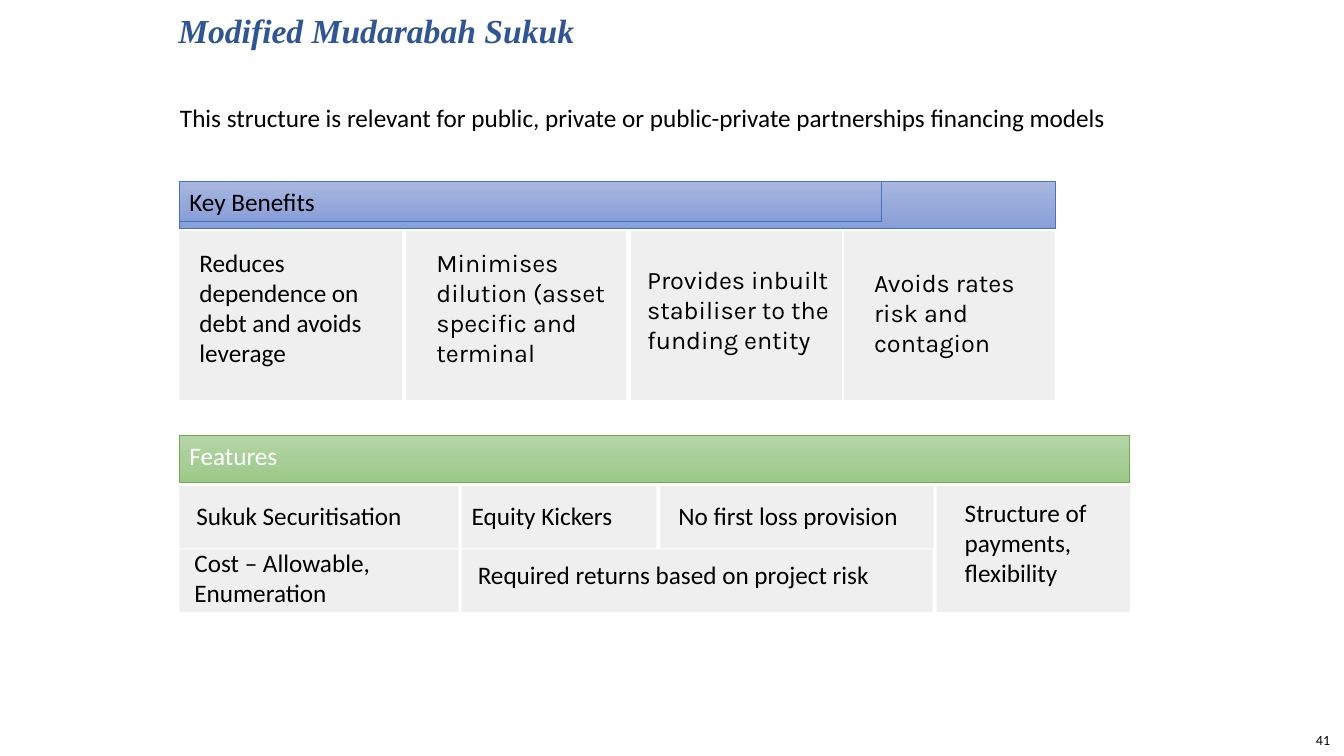
from lxml import etree
from pptx import Presentation
from pptx.dml.color import RGBColor
from pptx.enum import shapes, text
from pptx.oxml import ns
from pptx.util import Inches, Pt

COLORS = {
    "black": "000000", "white": "FFFFFF", "title": "2F5597", "panel": "D9D9D9",
    "blue_top": "A8B7DF", "blue_bottom": "889ED7", "blue_line": "4472C4",
    "green_top": "B5D5A7", "green_bottom": "9CC987", "green_line": "70AD47",
}

presentation = Presentation()
presentation.slide_width = Inches(13.33)
presentation.slide_height = Inches(7.5)
slide = presentation.slides.add_slide(presentation.slide_layouts[6])


def write(shape, words, size=18, font="Calibri", color="black"):
    frame = shape.text_frame
    frame.word_wrap = True
    frame.vertical_anchor = text.MSO_ANCHOR.TOP
    paragraph = frame.paragraphs[0]
    paragraph.text = words
    paragraph.alignment = text.PP_ALIGN.LEFT
    paragraph.font.size = Pt(size)
    paragraph.font.name = font
    paragraph.font.color.rgb = RGBColor.from_string(COLORS[color])
    return paragraph


def add_box(left, top, width, height, kind=shapes.MSO_SHAPE.RECTANGLE):
    shape = slide.shapes.add_shape(
        kind, Inches(left), Inches(top), Inches(width), Inches(height))
    shape.shadow.inherit = False
    shape.fill.background()
    shape.line.fill.background()
    return shape


# Translucent grey panels: four benefits, then six features
LEFT = 1.78
BENEFITS_TOP, BENEFITS_HEIGHT = 2.29, 1.68
ROW_1, ROW_2, ROW_HEIGHT = 4.82, 5.45, 0.62
panels = [(left, BENEFITS_TOP, width, BENEFITS_HEIGHT) for left, width in
          [(LEFT, 2.21), (4.03, 2.18), (6.26, 2.09), (8.37, 2.09)]]
panels += [
    (LEFT, ROW_1, 2.77, ROW_HEIGHT),
    (4.58, ROW_1, 1.93, ROW_HEIGHT),
    (6.55, ROW_1, 2.71, ROW_HEIGHT),
    (LEFT, ROW_2, 2.77, ROW_HEIGHT),
    (4.58, ROW_2, 4.67, ROW_HEIGHT),
    (9.29, ROW_1, 1.92, 1.25),
]
for panel in panels:
    shape = add_box(*panel)
    shape.fill.solid()
    shape.fill.fore_color.rgb = RGBColor.from_string(COLORS["panel"])
    color_element = shape._element.spPr.find(".//" + ns.qn("a:srgbClr"))
    etree.SubElement(color_element, ns.qn("a:alpha"), val="41000")

# Gradient header bars
for left, top, width, height, hue, heading in [
    (LEFT, 1.8, 8.69, 0.47, "blue", ""),
    (LEFT, 1.8, 6.96, 0.4, "blue", "Key Benefits"),
    (LEFT, 4.32, 9.42, 0.47, "green", ""),
]:
    bar = add_box(left, top, width, height)
    bar.fill.gradient()
    bar.fill.gradient_angle = 270
    for stop, position, end in zip(bar.fill.gradient_stops, (0, 1), ("top", "bottom")):
        stop.position = position
        stop.color.rgb = RGBColor.from_string(COLORS[f"{hue}_{end}"])
    bar.line.color.rgb = RGBColor.from_string(COLORS[f"{hue}_line"])
    bar.line.width = Pt(0.5)
    if heading:
        write(bar, heading)

# Introductory sentence
intro = add_box(1.15, 0.8, 10.33, 0.73, shapes.MSO_SHAPE.ROUNDED_RECTANGLE)
write(intro, "This structure is relevant for public, private or public-private "
             "partnerships financing models")
intro.text_frame.margin_left = Inches(0.6)
intro.text_frame.vertical_anchor = text.MSO_ANCHOR.MIDDLE

# Text boxes: left, top, width, height, words, size, font, colour
labels = [
    (1.67, 0.05, 10.67, 0.5, "Modified Mudarabah Sukuk", 24, "Times New Roman", "title"),
    (12.71, 7.14, 0.58, 0.4, "41", 10, "Calibri", "black"),
    (1.88, 2.4, 2.1, 1.31, "Reduces dependence on debt and avoids leverage",
     18, "Calibri", "black"),
    (4.23, 2.4, 1.98, 1.31, "Minimises dilution (asset specific and terminal",
     18, "Karla", "black"),
    (6.32, 2.57, 2.02, 1.01, "Provides inbuilt stabiliser to the funding entity",
     18, "Karla", "black"),
    (8.57, 2.6, 1.79, 1.01, "Avoids rates risk and contagion", 18, "Karla", "black"),
    (LEFT, 4.32, 6.96, 0.4, "Features", 18, "Calibri", "white"),
    (1.85, 4.91, 2.94, 0.4, "Sukuk Securitisation", 18, "Calibri", "black"),
    (4.58, 4.91, 2.24, 0.4, "Equity Kickers", 18, "Calibri", "black"),
    (6.63, 4.91, 2.62, 0.4, "No first loss provision", 18, "Calibri", "black"),
    (1.83, 5.38, 2.73, 1.01, "Cost – Allowable, Enumeration", 18, "Calibri", "black"),
    (9.47, 4.88, 1.63, 1.01, "Structure of payments, flexibility", 18, "Calibri", "black"),
    (4.64, 5.5, 4.55, 0.4, "Required returns based on project risk",
     18, "Calibri", "black"),
]
for left, top, width, height, words, size, font, color in labels:
    box = slide.shapes.add_textbox(
        Inches(left), Inches(top), Inches(width), Inches(height))
    paragraph = write(box, words, size, font, color)
    if color == "title":
        paragraph.font.bold = True
        paragraph.font.italic = True
    elif words == "41":
        paragraph.alignment = text.PP_ALIGN.RIGHT
        box.text_frame.vertical_anchor = text.MSO_ANCHOR.MIDDLE

presentation.save("out.pptx")
